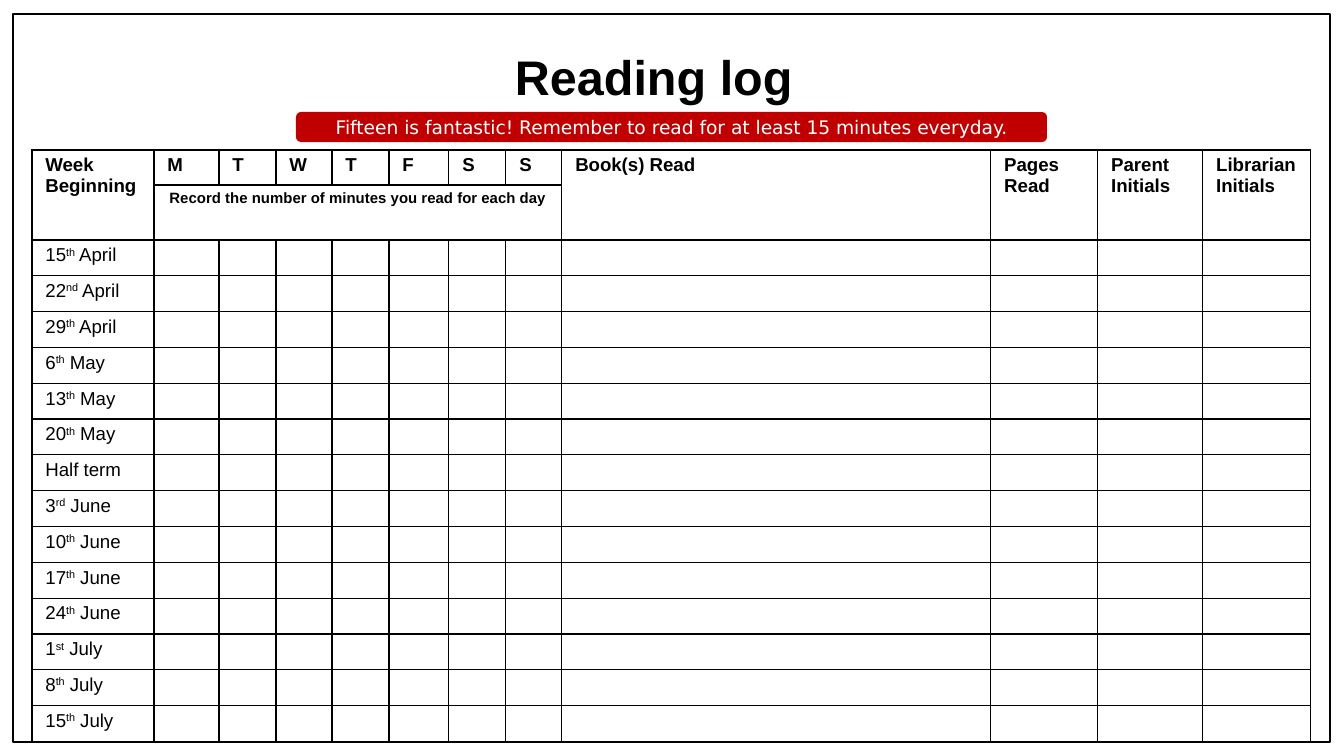
from dataclasses import dataclass

import lxml.etree
import pptx
import pptx.dml.color
import pptx.enum.shapes
import pptx.enum.text
import pptx.oxml.ns
import pptx.util

EMU_PER_PX = 914400 / 134.4
BLACK, WHITE, RED = "000000", "FFFFFF", "C00000"
CENTER = pptx.enum.text.PP_ALIGN.CENTER
LEFT = pptx.enum.text.PP_ALIGN.LEFT
SHAPES = pptx.enum.shapes.MSO_SHAPE
qn = pptx.oxml.ns.qn


@dataclass(frozen=True)
class Box:
    left: int
    top: int
    width: int
    height: int

    def emu(self) -> list[int]:
        return [px(n) for n in (self.left, self.top, self.width, self.height)]


@dataclass(frozen=True)
class Style:
    size: int
    bold: bool = False
    name: str = "Arial"
    color: str = BLACK
    align: int = LEFT


@dataclass(frozen=True)
class Column:
    heading: str
    width: int


TITLE = Style(26, bold=True, align=CENTER)
BANNER = Style(10, name="DejaVu Sans", color=WHITE, align=CENTER)
HEADING = Style(10, bold=True)
NOTE = Style(8, bold=True, align=CENTER)
WEEK = Style(10)

COLUMNS = [
    Column("Week Beginning", 122),
    Column("M", 65), Column("T", 57), Column("W", 56), Column("T", 57),
    Column("F", 60), Column("S", 57), Column("S", 56),
    Column("Book(s) Read", 429),
    Column("Pages Read", 107), Column("Parent Initials", 105),
    Column("Librarian Initials", 108),
]
FIRST_DAY, LAST_DAY = 1, 7
WEEKS = [
    "15^th^ April", "22^nd^ April", "29^th^ April", "6^th^ May", "13^th^ May",
    "20^th^ May", "Half term", "3^rd^ June", "10^th^ June", "17^th^ June",
    "24^th^ June", "1^st^ July", "8^th^ July", "15^th^ July",
]
HEADER_HEIGHTS = [35, 55]
WEEKS_HEIGHT = 502
CELL_PADDING = 5


def px(count: int) -> int:
    return round(count * EMU_PER_PX)


def rgb(color: str) -> pptx.dml.color.RGBColor:
    return pptx.dml.color.RGBColor.from_string(color)


def write(frame, text: str, style: Style) -> None:
    paragraph = frame.paragraphs[0]
    paragraph.alignment = style.align
    formats = {"size": pptx.util.Pt(style.size), "bold": style.bold, "name": style.name}
    for index, piece in enumerate(text.split("^")):
        run = paragraph.add_run()
        run.text = piece
        for key, value in formats.items():
            setattr(run.font, key, value)
        run.font.color.rgb = rgb(style.color)
        if index % 2:
            run._r.get_or_add_rPr().set("baseline", "30000")


def center_frame(frame) -> None:
    formats = {"word_wrap": True, "vertical_anchor": pptx.enum.text.MSO_ANCHOR.MIDDLE}
    formats |= {f"margin_{side}": pptx.util.Inches(0.1)
                for side in ("left", "top", "right", "bottom")}
    for key, value in formats.items():
        setattr(frame, key, value)


def add_border(cell) -> None:
    properties = cell._tc.get_or_add_tcPr()
    for position, side in enumerate(("lnL", "lnR", "lnT", "lnB")):
        line = lxml.etree.Element(qn(f"a:{side}"), w=str(pptx.util.Pt(0.75)))
        fill = lxml.etree.SubElement(line, qn("a:solidFill"))
        lxml.etree.SubElement(fill, qn("a:srgbClr"), val=BLACK)
        properties.insert(position, line)


def add_page_frame(slide, box: Box) -> None:
    page = slide.shapes.add_shape(SHAPES.RECTANGLE, *box.emu())
    page.shadow.inherit = False
    page.fill.background()
    page.line.color.rgb = rgb(BLACK)
    page.line.width = pptx.util.Pt(0.75)


def add_title(slide, box: Box, text: str) -> None:
    frame = slide.shapes.add_textbox(*box.emu()).text_frame
    center_frame(frame)
    write(frame, text, TITLE)
    frame.paragraphs[0].line_spacing = 1.15


def add_banner(slide, box: Box, text: str) -> None:
    banner = slide.shapes.add_shape(SHAPES.ROUNDED_RECTANGLE, *box.emu())
    banner.shadow.inherit = False
    banner.fill.solid()
    banner.fill.fore_color.rgb = rgb(RED)
    banner.line.fill.background()
    center_frame(banner.text_frame)
    write(banner.text_frame, text, BANNER)


def add_log(slide, left: int, top: int) -> None:
    box = Box(left, top, sum(column.width for column in COLUMNS),
              sum(HEADER_HEIGHTS) + WEEKS_HEIGHT)
    heights = [px(height) for height in HEADER_HEIGHTS]
    heights += [px(WEEKS_HEIGHT) // len(WEEKS)] * len(WEEKS)
    log = slide.shapes.add_table(len(heights), len(COLUMNS), *box.emu()).table
    log.first_row = log.horz_banding = False
    for row, height in zip(log.rows, heights):
        row.height = height
    for index, column in enumerate(COLUMNS):
        log.columns[index].width = px(column.width)
        write(log.cell(0, index).text_frame, column.heading, HEADING)
        if not FIRST_DAY <= index <= LAST_DAY:
            log.cell(0, index).merge(log.cell(1, index))
    log.cell(1, FIRST_DAY).merge(log.cell(1, LAST_DAY))
    write(log.cell(1, FIRST_DAY).text_frame,
          "Record the number of minutes you read for each day", NOTE)
    for index, week in enumerate(WEEKS, len(HEADER_HEIGHTS)):
        write(log.cell(index, 0).text_frame, week, WEEK)
    for cell in log.iter_cells():
        cell.margin_top = cell.margin_bottom = px(CELL_PADDING)
        cell.fill.background()
        add_border(cell)
        if not cell.text_frame.text:
            lxml.etree.SubElement(cell.text_frame.paragraphs[0]._p,
                                  qn("a:endParaRPr"), sz=str(WEEK.size * 100))


def main() -> None:
    deck = pptx.Presentation()
    deck.slide_width, deck.slide_height = px(1344), px(756)
    slide = deck.slides.add_slide(deck.slide_layouts[6])
    add_page_frame(slide, Box(13, 14, 1317, 728))
    add_title(slide, Box(470, 39, 368, 65), "Reading log")
    add_log(slide, 32, 150)
    add_banner(slide, Box(296, 112, 751, 30),
               "Fifteen is fantastic! Remember to read for at least 15 minutes everyday.")
    deck.save("out.pptx")


if __name__ == "__main__":
    main()
